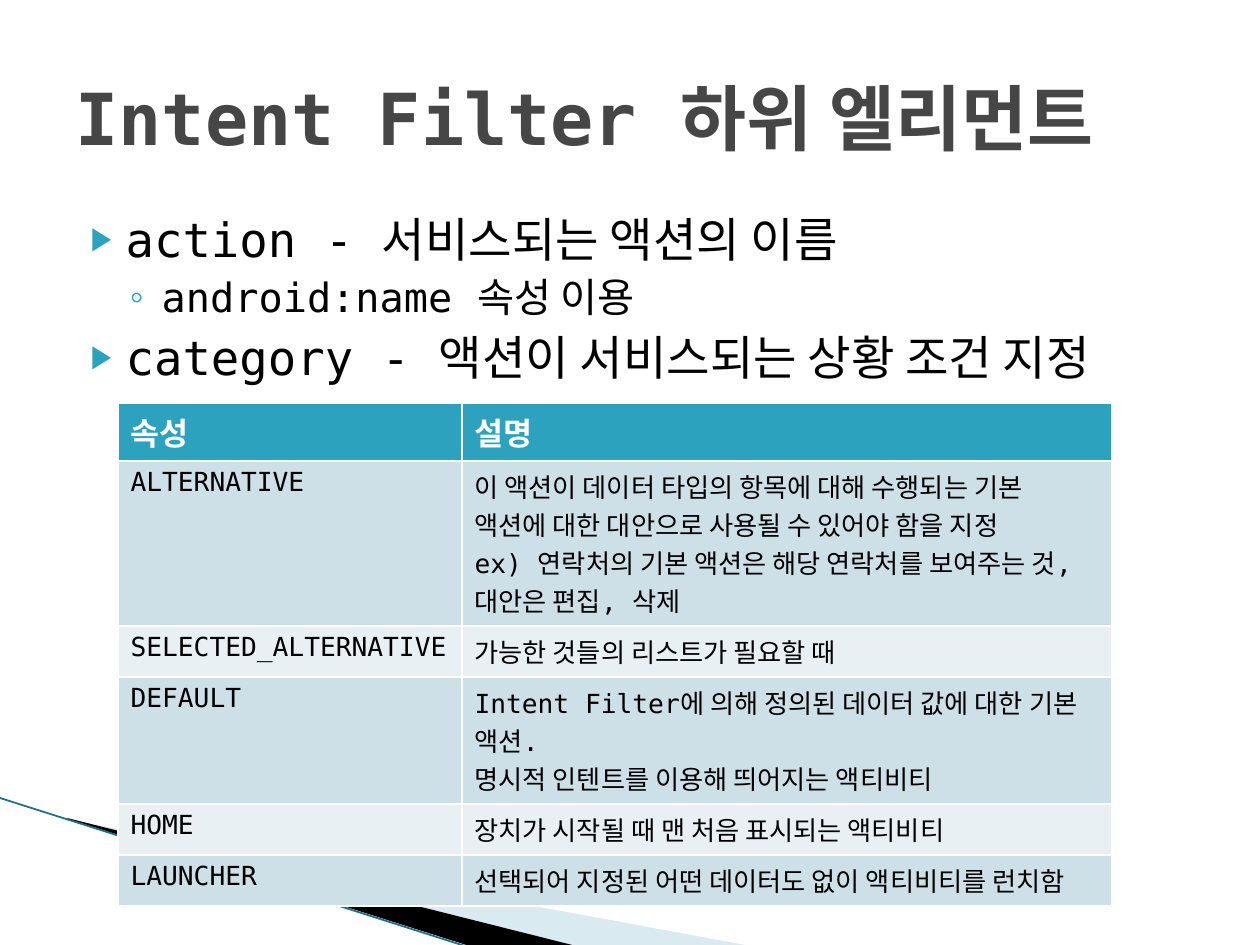
import pptx
import pptx.util
import pptx.oxml
import pptx.oxml.ns
import pptx.dml.color
import pptx.enum.shapes
import pptx.enum.text
import lxml.etree

RGB = pptx.dml.color.RGBColor
TEAL = RGB(0x2D, 0xA2, 0xBF)
DEEP = RGB(0x1A, 0x70, 0x88)
MIST = RGB(0xA0, 0xCB, 0xDC)
DARK = RGB(0xCD, 0xE0, 0xE8)
PALE = RGB(0xE8, 0xF0, 0xF4)
GREY = RGB(0x46, 0x46, 0x46)
BLACK = RGB(0, 0, 0)
WHITE = RGB(255, 255, 255)
FONT = "DejaVu Sans Mono"
SCALE = 914400 / 126

LIST = [
    ("action - 서비스되는 액션의 이름", 0),
    ("android:name 속성 이용", 1),
    ("category - 액션이 서비스되는 상황 조건 지정", 0),
]
LEVELS = [
    dict(size=27, mark="▶", ratio=68, left=50, hang=35, before=4),
    dict(size=23, mark="◦", ratio=100, left=86, hang=32, before=3.2),
]
ROWS = [
    ("속성", "설명"),
    ("ALTERNATIVE",
     "이 액션이 데이터 타입의 항목에 대해 수행되는 기본 액션에 대한 대안으로 사용될 수 있어야 함을 지정\n"
     "ex) 연락처의 기본 액션은 해당 연락처를 보여주는 것, 대안은 편집, 삭제"),
    ("SELECTED_ALTERNATIVE", "가능한 것들의 리스트가 필요할 때"),
    ("DEFAULT",
     "Intent Filter에 의해 정의된 데이터 값에 대한 기본 액션.\n"
     "명시적 인텐트를 이용해 띄어지는 액티비티"),
    ("HOME", "장치가 시작될 때 맨 처음 표시되는 액티비티"),
    ("LAUNCHER", "선택되어 지정된 어떤 데이터도 없이 액티비티를 런치함"),
]
WIDTHS = [344, 650]
HEIGHTS = [57, 165, 51, 126, 51, 51]


def px(n):
    return pptx.util.Emu(round(n * SCALE))


def sub(node, tag, **attrs):
    return lxml.etree.SubElement(node, pptx.oxml.ns.qn(tag), attrs)


def place(shape, x, y, w, h):
    shape.left, shape.top, shape.width, shape.height = map(px, (x, y, w, h))


def bullet(para, mark, ratio, left, hang):
    props = para._p.get_or_add_pPr()
    props.set("marL", str(px(left)))
    props.set("indent", str(-px(hang)))
    sub(sub(props, "a:buClr"), "a:srgbClr", val=str(TEAL))
    sub(props, "a:buSzPct", val=str(ratio * 1000))
    sub(props, "a:buChar", char=mark)


def write(para, text, size=15, color=BLACK, bold=False, before=0):
    para.text = text
    para.alignment = pptx.enum.text.PP_ALIGN.LEFT
    para.space_before = pptx.util.Pt(before)
    font = para.runs[0].font
    font.name = FONT
    font.size = pptx.util.Pt(size)
    font.bold = bold
    font.color.rgb = color


def reframe(shape, box):
    left, top = shape.left, shape.top
    place(shape, *box)
    for path in shape._element.iter(pptx.oxml.ns.qn("a:path")):
        path.set("w", str(shape.width))
        path.set("h", str(shape.height))
        for spot in path.iter(pptx.oxml.ns.qn("a:pt")):
            spot.set("x", str(int(spot.get("x")) + left - shape.left))
            spot.set("y", str(int(spot.get("y")) + top - shape.top))


def wedge(shapes, points, box, color, alpha=100):
    spots = [(px(x), px(y)) for x, y in points]
    pen = shapes.build_freeform(*spots[0], scale=1.0)
    pen.add_line_segments(spots[1:], close=True)
    shape = pen.convert_to_shape()
    reframe(shape, box)
    shape.shadow.inherit = False
    shape.line.fill.background()
    shape.fill.solid()
    shape.fill.fore_color.rgb = color
    if alpha < 100:
        tone = shape.fill._xPr.find(".//" + pptx.oxml.ns.qn("a:srgbClr"))
        sub(tone, "a:alpha", val=str(alpha * 1000))


def stroke(shapes, x1, y1, x2, y2):
    kind = pptx.enum.shapes.MSO_CONNECTOR.STRAIGHT
    line = shapes.add_connector(kind, px(x1), px(y1), px(x2), px(y2))
    line.line.color.rgb = DEEP
    line.line.width = pptx.util.Pt(1)
    sub(line._element.spPr, "a:effectLst")


def fill_cell(cell, text, row):
    if row == 0:
        tint, style = TEAL, dict(size=18, color=WHITE, bold=True)
    else:
        tint, style = (DARK if row % 2 else PALE), {}
    cell.fill.solid()
    cell.fill.fore_color.rgb = tint
    frame = cell.text_frame
    for i, part in enumerate(text.split("\n")):
        write(frame.add_paragraph() if i else frame.paragraphs[0], part, **style)


def grid(shapes, x, y):
    frame = shapes.add_table(len(ROWS), len(WIDTHS), px(x), px(y),
                             px(sum(WIDTHS)), px(sum(HEIGHTS)))
    table = frame.table
    for col, width in zip(table.columns, WIDTHS):
        col.width = px(width)
    for r, texts in enumerate(ROWS):
        table.rows[r].height = px(HEIGHTS[r])
        for c, text in enumerate(texts):
            fill_cell(table.cell(r, c), text, r)


def front(shape):
    node = shape._element
    node.getparent().append(node)


def heading(shape):
    place(shape, 63, 38, 1134, 157)
    frame = shape.text_frame
    frame.auto_size = pptx.enum.text.MSO_AUTO_SIZE.NONE
    frame.vertical_anchor = pptx.enum.text.MSO_ANCHOR.MIDDLE
    write(frame.paragraphs[0], "Intent Filter 하위 엘리먼트",
          size=41, color=GREY, bold=True)
    front(shape)


def outline(shape):
    place(shape, 63, 204, 1134, 624)
    frame = shape.text_frame
    frame.auto_size = pptx.enum.text.MSO_AUTO_SIZE.NONE
    for i, (text, level) in enumerate(LIST):
        para = frame.add_paragraph() if i else frame.paragraphs[0]
        look = LEVELS[level]
        para.level = level
        bullet(para, look["mark"], look["ratio"], look["left"], look["hang"])
        write(para, text, size=look["size"], before=look["before"] if i else 0)
    front(shape)


def main():
    deck = pptx.Presentation()
    deck.slide_width, deck.slide_height = px(1260), px(945)
    slide = deck.slides.add_slide(deck.slide_layouts[1])
    shapes = slide.shapes
    wedge(shapes, [(69, 820), (745, 945), (572, 945), (69, 819)],
          (98, 689, 524, 199), MIST, 40)
    wedge(shapes, [(67, 818), (572, 945), (466, 945), (68, 819)],
          (-8, 798, 524, 116), BLACK)
    stroke(shapes, 0, 798, 465, 946)
    outline(slide.placeholders[1])
    heading(shapes.title)
    grid(shapes, 118, 403)
    deck.save("out.pptx")


if __name__ == "__main__":
    main()
